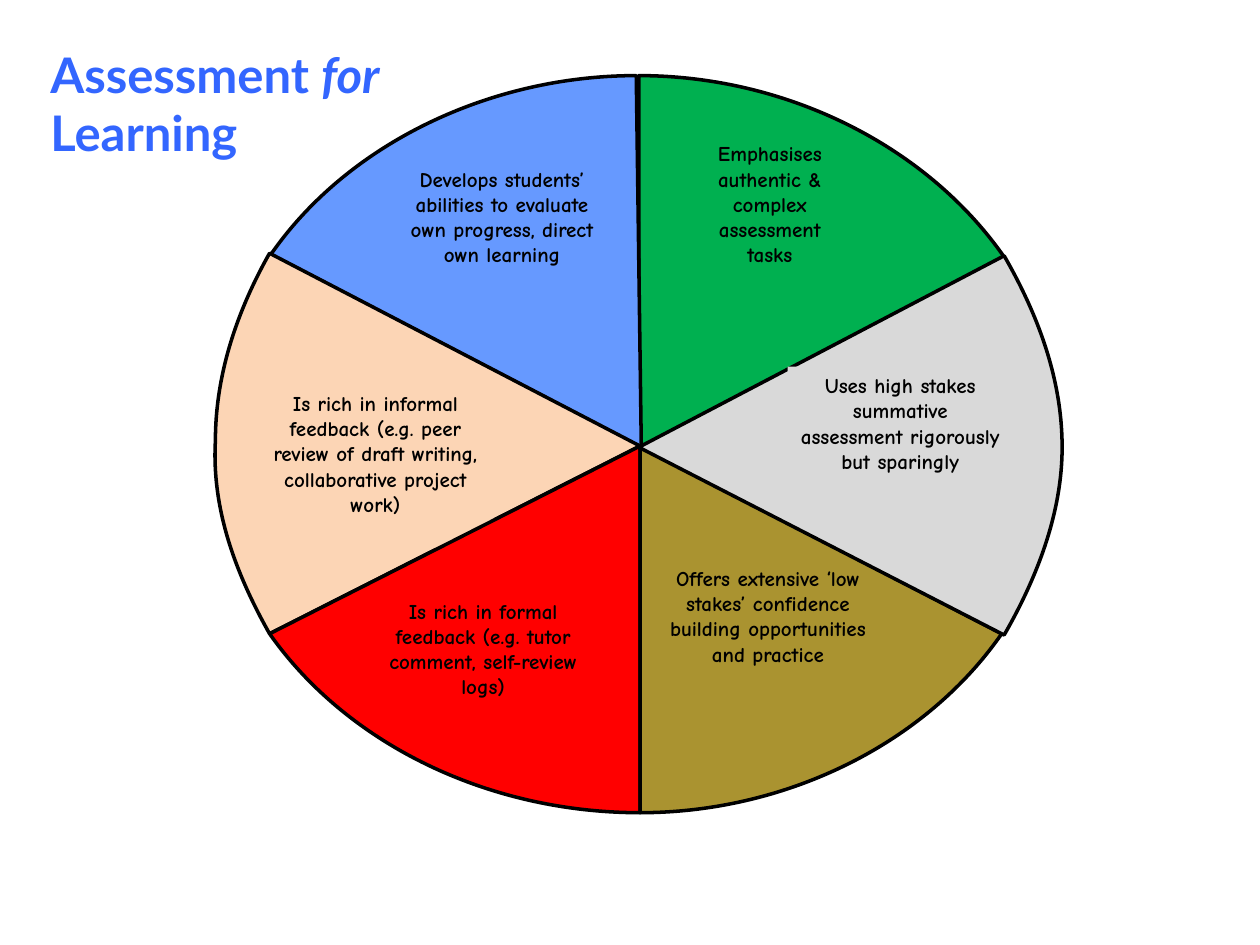
from lxml.etree import Element
from pptx import Presentation
from pptx.dml.color import RGBColor
from pptx.enum.shapes import MSO_SHAPE
from pptx.enum.text import MSO_ANCHOR, MSO_AUTO_SIZE, PP_ALIGN
from pptx.oxml.ns import qn
from pptx.util import Inches, Pt

COLORS = {
    "title": "3366FF", "ink": "000000", "green": "00B050", "blue": "6699FF",
    "peach": "FCD5B5", "red": "FF0000", "olive": "AA9330", "grey": "D9D9D9",
}

# Each slice: colour, centre point, rim (start, then three points per cubic curve),
# label box (left, top, width, height), side margin, whether the label is filled, text
SLICES = [
    ("green", (5.07, 3.58), [(7.97, 2.04), (7.35, 1.15), (6.23, 0.6), (5.07, 0.6)],
     (5.44, 1.07, 1.34, 1.1), 0.1, True,
     "Emphasises authentic & complex assessment tasks"),
    ("blue", (5.09, 3.55), [(5.05, 0.6), (3.89, 0.6), (2.76, 1.14), (2.15, 2.02)],
     (3.1, 1.27, 1.77, 1.1), 0.1, False,
     "Develops students’ abilities to evaluate own progress, direct own learning"),
    ("peach", (5.08, 3.54), [(2.14, 2.01), (1.87, 2.49), (1.71, 2.99), (1.71, 3.5),
                             (1.68, 4.04), (1.87, 4.55), (2.14, 5.03)],
     (2.04, 3.05, 1.88, 1.3), 0.1, True,
     "Is rich in informal feedback (e.g. peer review of draft writing, "
     "collaborative project work)"),
    ("red", (5.08, 3.54), [(2.14, 5.03), (2.76, 5.91), (3.88, 6.45), (5.08, 6.45)],
     (2.8, 4.7, 2.07, 0.9), 0.2, False,
     "Is rich in formal feedback (e.g. tutor comment, self-review logs)"),
    ("olive", (5.08, 3.54), [(5.08, 6.45), (6.23, 6.45), (7.34, 5.91), (7.95, 5.03)],
     (5.19, 4.44, 1.81, 1.1), 0.1, False,
     "Offers extensive ‘low stakes’ confidence building opportunities and practice"),
    ("grey", (5.07, 3.55), [(7.97, 5.04), (8.24, 4.57), (8.43, 4.06), (8.43, 3.55),
                            (8.43, 3.01), (8.24, 2.5), (7.97, 2.03)],
     (6.25, 2.91, 1.79, 1.1), 0.1, True,
     "Uses high stakes summative assessment rigorously but sparingly"),
]


def color(name):
    return RGBColor.from_string(COLORS[name])


def bend_rim(wedge, rim_segments):
    """Turn each three straight rim segments into one cubic curve."""
    segments = list(wedge.element.iter(qn("a:lnTo")))[:rim_segments]
    for first in range(0, rim_segments, 3):
        curve = Element(qn("a:cubicBezTo"))
        segments[first].addprevious(curve)
        for segment in segments[first:first + 3]:
            curve.append(segment[0])
            segment.getparent().remove(segment)


class WheelSlide:
    title_font, title_size = "Lato", Pt(28)
    label_font, label_size = "Comic Neue", Pt(12)
    outline_width = Pt(2)

    def __init__(self, slide):
        self.slide = slide

    def add_run(self, paragraph, text, font, size, color_name, italic=False):
        run = paragraph.add_run()
        run.text = text
        run.font.name, run.font.size = font, size
        run.font.bold, run.font.italic = True, italic
        run.font.color.rgb = color(color_name)

    def title(self, box, runs):
        heading = self.slide.shapes.title
        heading.left, heading.top, heading.width, heading.height = map(Inches, box)
        frame = heading.text_frame
        frame.word_wrap = True
        frame.auto_size = MSO_AUTO_SIZE.NONE
        frame.vertical_anchor = MSO_ANCHOR.TOP
        paragraph = frame.paragraphs[0]
        paragraph.alignment = PP_ALIGN.LEFT
        paragraph.space_before = Pt(0)
        for text, italic in runs:
            self.add_run(paragraph, text, self.title_font, self.title_size, "title", italic)

    def wedge(self, shapes, fill, center, rim):
        start, *outline = [tuple(map(Inches, point)) for point in rim + [center]]
        builder = shapes.build_freeform(*start)
        builder.add_line_segments(outline, close=True)
        wedge = builder.convert_to_shape()
        bend_rim(wedge, len(rim) - 1)
        wedge.shadow.inherit = False
        wedge.fill.solid()
        wedge.fill.fore_color.rgb = color(fill)
        wedge.line.color.rgb = color("ink")
        wedge.line.width = self.outline_width

    def label(self, shapes, box, margin, text, fill=None):
        if fill:
            label = shapes.add_shape(MSO_SHAPE.RECTANGLE, *map(Inches, box))
            label.shadow.inherit = False
            label.fill.solid()
            label.fill.fore_color.rgb = color(fill)
            label.line.fill.background()
        else:
            label = shapes.add_textbox(*map(Inches, box))
        frame = label.text_frame
        frame.word_wrap = True
        frame.vertical_anchor = MSO_ANCHOR.TOP
        frame.margin_left = frame.margin_right = Inches(margin)
        paragraph = frame.paragraphs[0]
        paragraph.alignment = PP_ALIGN.CENTER
        self.add_run(paragraph, text, self.label_font, self.label_size, "ink")

    def slice(self, fill, center, rim, box, margin, filled, text):
        shapes = self.slide.shapes.add_group_shape().shapes
        self.wedge(shapes, fill, center, rim)
        self.label(shapes, box, margin, text, fill if filled else None)


def main():
    deck = Presentation()
    deck.slide_width, deck.slide_height = Inches(10), Inches(7.5)
    wheel = WheelSlide(deck.slides.add_slide(deck.slide_layouts[5]))

    # Wheel of six principles
    for principle in SLICES:
        wheel.slice(*principle)

    # Title
    wheel.title((0.3, 0.3, 3.64, 1.03),
                [("Assessment ", False), ("for", True), (" Learning", False)])

    deck.save("out.pptx")


if __name__ == "__main__":
    main()
